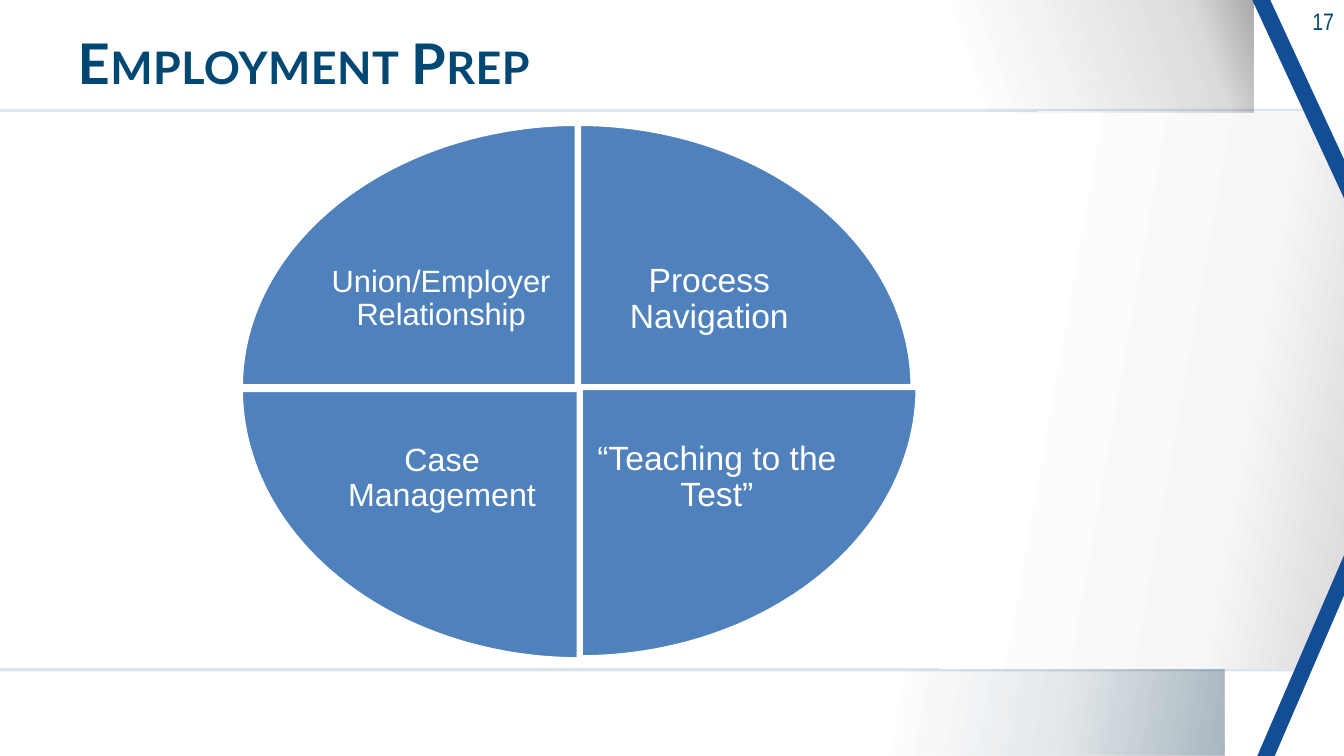
from lxml import etree
from pptx import Presentation
from pptx import util as u
from pptx.dml.color import RGBColor
from pptx.enum import shapes, text
from pptx.oxml import ns

PRESET = shapes.MSO_SHAPE
NAVY, BLUE, WHITE, SLICE = "004874", "124D95", "FFFFFF", "4F81BD"


def color(value):
    """Turn a hex string into a colour."""
    return RGBColor.from_string(value)


def add_preset(slide, preset, box, fill=WHITE):
    """Add a flat preset shape with a solid fill and no line."""
    shape = slide.shapes.add_shape(preset, *(u.Inches(length) for length in box))
    shape.shadow.inherit = False
    shape.fill.solid()
    shape.fill.fore_color.rgb = color(fill)
    shape.line.fill.background()
    return shape


def set_alpha(color_element, percent):
    """Set the opacity of a colour element."""
    etree.SubElement(color_element, ns.qn("a:alpha"), val=str(percent * 1000))


def add_gradient_band(slide, box, stops, angle):
    """Add a rectangle filled with a linear gradient of (position, colour, opacity)."""
    shape = add_preset(slide, PRESET.RECTANGLE, box)
    solid = shape._element.spPr.find(ns.qn("a:solidFill"))
    gradient = etree.Element(ns.qn("a:gradFill"), rotWithShape="1")
    stop_list = etree.SubElement(gradient, ns.qn("a:gsLst"))
    for position, value, opacity in stops:
        stop = etree.SubElement(stop_list, ns.qn("a:gs"), pos=str(position * 1000))
        stop_color = etree.SubElement(stop, ns.qn("a:srgbClr"), val=value)
        set_alpha(stop_color, opacity)
    etree.SubElement(gradient, ns.qn("a:lin"), ang=str(angle * 60000), scaled="0")
    solid.getparent().replace(solid, gradient)


def add_corner(slide, outer, inner, at_top):
    """Add a blue corner stripe as a white triangle over a blue one."""
    for box, fill in ((outer, BLUE), (inner, WHITE)):
        triangle = add_preset(slide, PRESET.ISOSCELES_TRIANGLE, box, fill)
        triangle.adjustments[0] = 1
        if at_top:
            triangle._element.spPr.find(ns.qn("a:xfrm")).set("flipV", "1")


def add_text(slide, box, words, size, font, value, alignment, inset=0.1):
    """Add a wrapped one-paragraph text box."""
    shape = slide.shapes.add_textbox(*(u.Inches(length) for length in box))
    frame = shape.text_frame
    frame.word_wrap = True
    frame.margin_left = frame.margin_right = u.Inches(inset)
    frame.margin_top = frame.margin_bottom = u.Inches(inset / 2)
    paragraph = frame.paragraphs[0]
    paragraph.text = words
    paragraph.alignment = alignment
    paragraph.font.size = u.Pt(size)
    paragraph.font.name = font
    paragraph.font.color.rgb = color(value)
    return frame


def add_background(slide):
    """Add the framed body panel, shaded bands, corners and page number."""
    frame = add_preset(slide, PRESET.RECTANGLE, (0, 1.08, 13.33, 5.58), "275A99")
    set_alpha(frame._element.spPr.find(".//" + ns.qn("a:srgbClr")), 16)
    add_gradient_band(slide, (0, 1.11, 13.33, 5.52), (
        (0, WHITE, 100), (72, WHITE, 100), (90, "F6F6F6", 100), (100, "D9D9D9", 100)), 10)
    add_gradient_band(slide, (8.58, 6.64, 3.56, 0.86), (
        (10, "002C47", 0), (56, "002C47", 11), (100, "002C47", 34)), 10)
    add_gradient_band(slide, (9.44, 0, 2.99, 1.12), (
        (10, "002C47", 0), (81, "000000", 14), (100, "000000", 34)), 340)
    add_corner(slide, (12.42, 0, 0.92, 1.99), (12.6, 0, 0.74, 1.6), True)
    add_corner(slide, (12.47, 5.51, 0.86, 1.99), (12.64, 5.91, 0.69, 1.6), False)
    add_text(slide, (12.26, 0.02, 1.07, 0.39), "17", 17, "Arial Narrow", NAVY,
             text.PP_ALIGN.RIGHT)


def fill_title(slide, box, words):
    """Place and format the title placeholder in small capitals."""
    title = slide.shapes.title
    title.left, title.top, title.width, title.height = (u.Inches(length) for length in box)
    frame = title.text_frame
    frame.auto_size = text.MSO_AUTO_SIZE.NONE
    frame.vertical_anchor = text.MSO_ANCHOR.MIDDLE
    paragraph = frame.paragraphs[0]
    paragraph.text = words
    paragraph.alignment = text.PP_ALIGN.LEFT
    paragraph.line_spacing = 0.85
    paragraph.font.size = u.Pt(40)
    paragraph.font.name = "Lato"
    paragraph.font.bold = True
    paragraph.font.color.rgb = color(NAVY)
    properties = paragraph.runs[0].font._element
    properties.set("cap", "small")
    properties.set("spc", "40")


def add_quarter(slide, box, start, label_box, words, size):
    """Add a quarter pie from a start angle in degrees, with its label."""
    quarter = add_preset(slide, PRESET.PIE, box, SLICE)
    quarter.adjustments[0] = start * 0.6
    quarter.adjustments[1] = (start + 90) % 360 * 0.6
    quarter.line.color.rgb = color(WHITE)
    quarter.line.width = u.Pt(4.33)
    frame = add_text(slide, label_box, words, size, "Arial", WHITE,
                     text.PP_ALIGN.CENTER, 0.03)
    frame.vertical_anchor = text.MSO_ANCHOR.MIDDLE
    frame.paragraphs[0].line_spacing = 0.9


def add_wheel(slide):
    """Add the four quarters of the employment wheel."""
    quarters = (
        ((2.41, 1.22, 6.65, 5.24), (5.81, 2.19, 2.45, 1.56), "Process Navigation", 24),
        ((2.39, 1.15, 6.72, 5.38), (5.87, 3.94, 2.48, 1.6), "“Teaching to the Test”", 24),
        ((2.38, 1.17, 6.74, 5.38), (3.14, 3.95, 2.49, 1.6), "Case Management", 23),
        ((2.38, 1.22, 6.7, 5.24), (3.14, 2.19, 2.47, 1.56), "Union/Employer Relationship", 22),
    )
    for index, (box, label_box, words, size) in enumerate(quarters):
        add_quarter(slide, box, (270 + 90 * index) % 360, label_box, words, size)


def main():
    """Build and save the slide."""
    presentation = Presentation()
    presentation.slide_width = u.Inches(13.33)
    presentation.slide_height = u.Inches(7.5)
    slide = presentation.slides.add_slide(presentation.slide_layouts[5])
    add_background(slide)
    fill_title(slide, (0.67, 0.24, 10.07, 0.85), "Employment Prep")
    slide.shapes._spTree.append(slide.shapes.title._element)
    add_wheel(slide)
    presentation.save("out.pptx")


if __name__ == "__main__":
    main()
